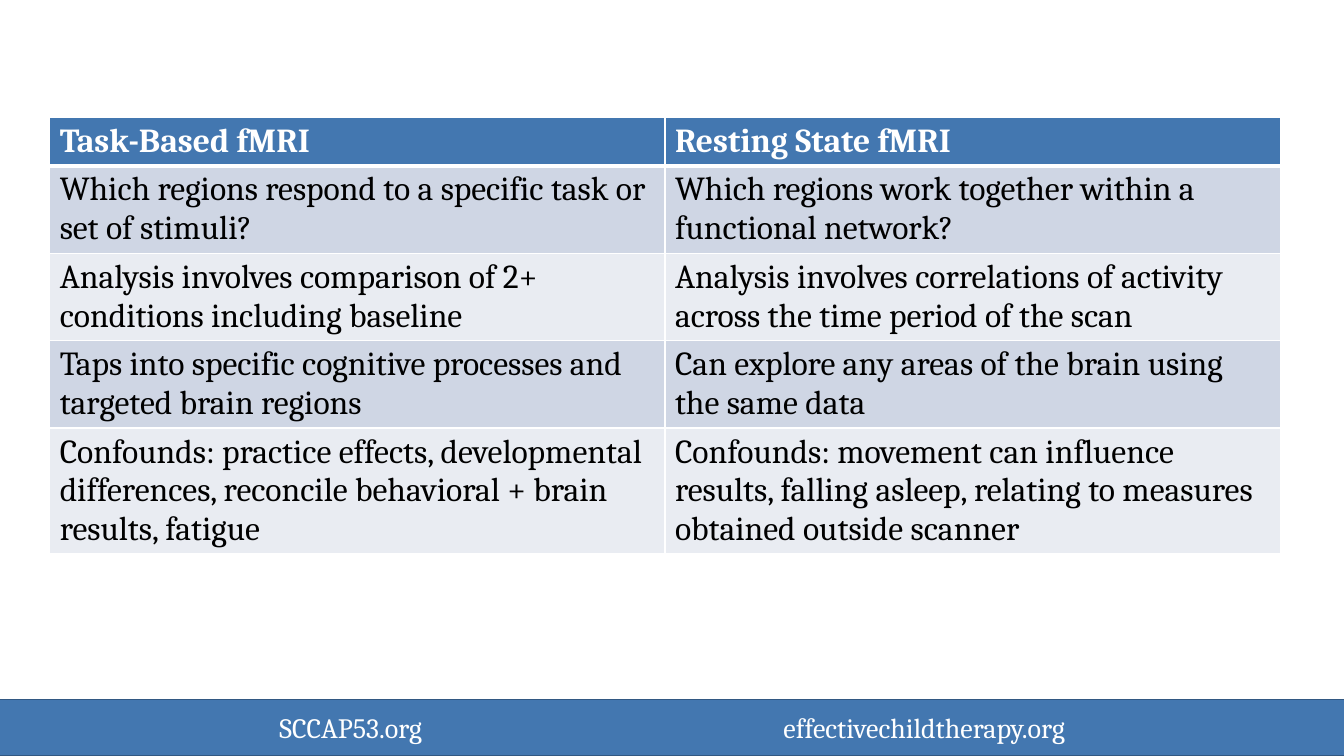
"""Build a slide comparing task-based and resting state fMRI."""
from dataclasses import dataclass

from lxml.etree import SubElement
from pptx import Presentation
from pptx.dml.color import RGBColor
from pptx.enum.shapes import MSO_SHAPE
from pptx.enum.text import MSO_ANCHOR, PP_ALIGN
from pptx.oxml.ns import qn
from pptx.util import Pt


@dataclass(frozen=True)
class Theme:
    """Colours, font and type sizes of the slide."""
    blue: str = "4377B0"
    dark_blue: str = "325882"
    white: str = "FFFFFF"
    black: str = "000000"
    bands: tuple = ("CFD6E4", "E9ECF2")
    font: str = "Cambria"
    table_size: int = 24
    footer_size: int = 20
    line_height: float = 27.6
    cell_margins: float = 7.2


THEME = Theme()
COMPARISON = [
    ("Task-Based fMRI", "Resting State fMRI"),
    ("Which regions respond to a specific task or set of stimuli?",
     "Which regions work together within a functional network?"),
    ("Analysis involves comparison of 2+ conditions including baseline",
     "Analysis involves correlations of activity across the time period of the scan"),
    ("Taps into specific cognitive processes and targeted brain regions",
     "Can explore any areas of the brain using the same data"),
    ("Confounds: practice effects, developmental differences, "
     "reconcile behavioral + brain results, fatigue",
     "Confounds: movement can influence results, falling asleep, "
     "relating to measures obtained outside scanner"),
]
LINES_PER_ROW = (1, 2, 2, 2, 3)


def style_text(paragraph, size, color, bold=False):
    """Format the runs of a paragraph."""
    for run in paragraph.runs:
        run.font.name = THEME.font
        run.font.size = Pt(size)
        run.font.bold = bold
        run.font.color.rgb = RGBColor.from_string(color)


def set_borders(cell, **widths):
    """Draw white borders on a cell, with widths in points by side."""
    properties = cell._tc.get_or_add_tcPr()
    for side, width in widths.items():
        border = SubElement(properties, qn(f"a:ln{side}"), w=str(Pt(width)))
        fill = SubElement(border, qn("a:solidFill"))
        SubElement(fill, qn("a:srgbClr"), val=THEME.white)


def add_footer(slide, left_site, right_site):
    """Add the footer bar with two web addresses."""
    footer = slide.shapes.add_shape(
        MSO_SHAPE.RECTANGLE, Pt(-2), Pt(499.5), Pt(964.5), Pt(40.5))
    footer.shadow.inherit = False
    footer.fill.solid()
    footer.fill.fore_color.rgb = RGBColor.from_string(THEME.blue)
    footer.line.color.rgb = RGBColor.from_string(THEME.dark_blue)
    footer.line.width = Pt(1)
    footer.text_frame.vertical_anchor = MSO_ANCHOR.MIDDLE
    sites = footer.text_frame.paragraphs[0]
    sites.text = f"{left_site}\t{right_site}"
    sites.alignment = PP_ALIGN.CENTER
    tabs = SubElement(sites._p.get_or_add_pPr(), qn("a:tabLst"))
    SubElement(tabs, qn("a:tab"), pos=str(Pt(360)), algn="l")
    style_text(sites, THEME.footer_size, THEME.white)


def fill_cell(cell, text, row_index):
    """Write and colour one cell of the comparison."""
    is_header = row_index == 0
    cell.text_frame.text = text
    style_text(cell.text_frame.paragraphs[0], THEME.table_size,
               THEME.white if is_header else THEME.black, is_header)
    set_borders(cell, L=1, R=1, T=3 if row_index == 1 else 1,
                B=3 if is_header else 1)
    cell.fill.solid()
    background = THEME.blue if is_header else THEME.bands[(row_index - 1) % 2]
    cell.fill.fore_color.rgb = RGBColor.from_string(background)


def add_comparison(slide, rows):
    """Add the comparison table, with row heights that fit the lines of text."""
    heights = [lines * THEME.line_height + THEME.cell_margins
               for lines in LINES_PER_ROW]
    comparison = slide.shapes.add_table(
        len(rows), len(rows[0]), Pt(35.5), Pt(83.5), Pt(879), Pt(sum(heights))).table
    for row_index, (texts, height) in enumerate(zip(rows, heights)):
        comparison.rows[row_index].height = Pt(height)
        for column_index, text in enumerate(texts):
            fill_cell(comparison.cell(row_index, column_index), text, row_index)


def main():
    """Build and save the slide."""
    presentation = Presentation()
    presentation.slide_width, presentation.slide_height = Pt(960), Pt(540)
    slide = presentation.slides.add_slide(presentation.slide_layouts[6])
    add_footer(slide, "SCCAP53.org", "effectivechildtherapy.org")
    add_comparison(slide, COMPARISON)
    presentation.save("out.pptx")


if __name__ == "__main__":
    main()
